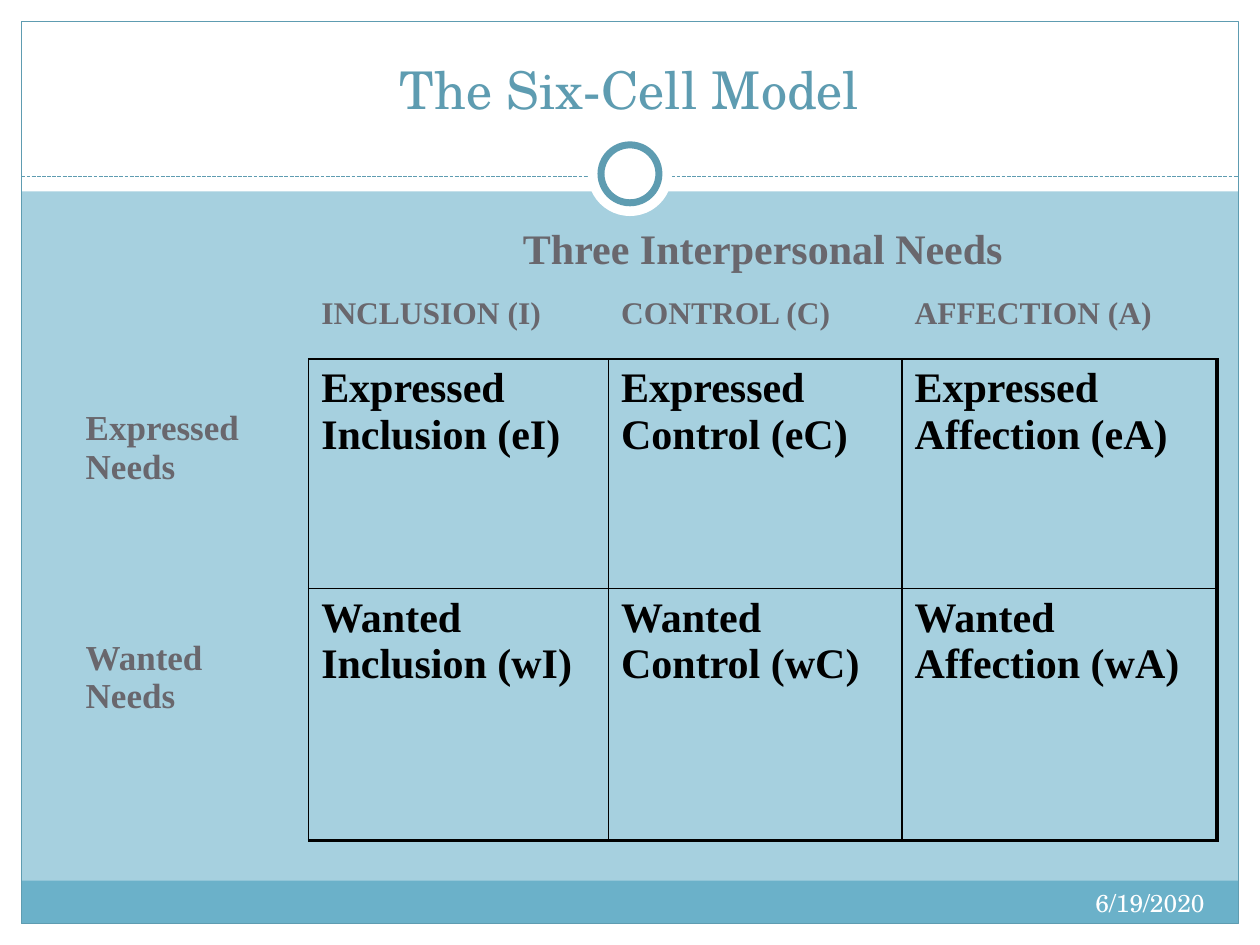
import pptx
import pptx.dml.color
import pptx.enum.dml
import pptx.enum.shapes
import pptx.enum.text
import pptx.util
from lxml import etree
from pptx.oxml.ns import qn
from pptx.util import Inches

SHAPE = pptx.enum.shapes.MSO_SHAPE
ALIGN = pptx.enum.text.PP_ALIGN
ANCHOR = pptx.enum.text.MSO_ANCHOR
SERIF, SCHOOL = "Times New Roman", "TeX Gyre Schola"
WHITE, BLACK, GREY = "FFFFFF", "000000", "69676D"
SKY, BAND, TEAL = "A6D0DF", "6BB1C9", "5E9CB1"
NO_STYLE_NO_GRID = "{2D5ABB26-0587-4C30-8999-92F81FD0307C}"


def rgb(value):
    return pptx.dml.color.RGBColor.from_string(value)


def add_panel(s, kind, box, fill=None, line=None, width=0.75):
    sp = s.shapes.add_shape(kind, *map(Inches, box))
    sp.shadow.inherit = False
    if fill:
        sp.fill.solid()
        sp.fill.fore_color.rgb = rgb(fill)
    else:
        sp.fill.background()
    if line:
        sp.line.color.rgb = rgb(line)
        sp.line.width = pptx.util.Pt(width)
    else:
        sp.line.fill.background()


def set_text(tf, text, size, font, color, bold=False, align=ALIGN.LEFT):
    tf.word_wrap = True
    tf.text = text
    p = tf.paragraphs[0]
    p.alignment = align
    p.font.size = pptx.util.Pt(size)
    p.font.name = font
    p.font.bold = bold
    p.font.color.rgb = rgb(color)


def set_border(cell, side, width):
    tc_pr = cell._tc.get_or_add_tcPr()
    ln = etree.SubElement(tc_pr, qn(f"a:ln{side}"), w=str(pptx.util.Pt(width)))
    fill = etree.SubElement(ln, qn("a:solidFill"))
    etree.SubElement(fill, qn("a:srgbClr"), val=BLACK)


def draw_frame(s, width, height):
    margin, header = 0.17, 1.52
    # White edges and header
    for box in [(0, height - margin, width, margin), (0, 0, width, header),
                (0, 0, margin, height), (width - margin, 0, margin, height)]:
        add_panel(s, SHAPE.RECTANGLE, box, WHITE)
    # Footer band and outline
    inner = width - 2 * margin
    add_panel(s, SHAPE.RECTANGLE, (margin, 6.99, inner, 0.34), BAND)
    add_panel(s, SHAPE.RECTANGLE, (margin, margin, inner, height - 2 * margin), line=TEAL)
    # Dashed rule
    rule = s.shapes.add_connector(
        pptx.enum.shapes.MSO_CONNECTOR.STRAIGHT,
        Inches(margin), Inches(1.4), Inches(width - margin), Inches(1.4))
    rule.line.color.rgb = rgb(TEAL)
    rule.line.width = pptx.util.Pt(0.75)
    rule.line.dash_style = pptx.enum.dml.MSO_LINE.SQUARE_DOT
    etree.SubElement(rule._element.spPr, qn("a:effectLst"))
    # Ring over the rule
    for size, line in [(0.67, None), (0.46, TEAL)]:
        box = (width / 2 - size / 2, 1.38 - size / 2, size, size)
        add_panel(s, SHAPE.OVAL, box, WHITE, line, 4)


def place_title(s, left, top, width, height):
    title = s.shapes.title
    title.left, title.top = Inches(left), Inches(top)
    title.width, title.height = Inches(width), Inches(height)
    tf = title.text_frame
    tf.auto_size = pptx.enum.text.MSO_AUTO_SIZE.NONE
    tf.vertical_anchor = ANCHOR.BOTTOM
    set_text(tf, "The Six-Cell Model", 29.7, SCHOOL, TEAL, align=ALIGN.CENTER)
    s.shapes._spTree.append(title._element)  # in front of the header


def draw_needs_table(s, left, top):
    cols, rows = [1.87, 2.38, 2.33, 2.5], [0.55, 0.55, 1.82, 2]
    needs = [("Inclusion", "I"), ("Control", "C"), ("Affection", "A")]
    frame = s.shapes.add_table(len(rows), len(cols), Inches(left), Inches(top),
                               Inches(sum(cols)), Inches(sum(rows)))
    table = frame.table
    table.first_row = table.horz_banding = False
    table._tbl.tblPr.find(qn("a:tableStyleId")).text = NO_STYLE_NO_GRID
    for column, width in zip(table.columns, cols):
        column.width = Inches(width)
    for row, height in zip(table.rows, rows):
        row.height = Inches(height)

    # Column headings
    table.cell(0, 1).merge(table.cell(0, 3))
    set_text(table.cell(0, 1).text_frame, "Three Interpersonal Needs",
             24, SERIF, GREY, True, ALIGN.CENTER)
    for c, (need, letter) in enumerate(needs, 1):
        set_text(table.cell(1, c).text_frame, f"{need.upper()} ({letter})",
                 18, SERIF, GREY, True)
        set_border(table.cell(1, c), "B", 1)

    # Row labels and the six cells
    for r, kind in enumerate(["Expressed", "Wanted"], 2):
        label = table.cell(r, 0)
        label.margin_top = Inches(0.4)
        set_text(label.text_frame, f"{kind} Needs", 20, SERIF, GREY, True)
        set_border(label, "R", 1)
        for c, (need, letter) in enumerate(needs, 1):
            cell = table.cell(r, c)
            set_text(cell.text_frame, f"{kind} {need} ({kind[0].lower()}{letter})",
                     24, SERIF, BLACK, True)
            set_border(cell, "L", 1)
            set_border(cell, "R", 2.25 if c == 3 else 1)
            set_border(cell, "T", 1)
            set_border(cell, "B", 2.25 if r == 3 else 1)

    for cell in table.iter_cells():
        cell.fill.background()


def place_date(s, left, top, width, height):
    box = s.shapes.add_textbox(*map(Inches, (left, top, width, height)))
    set_text(box.text_frame, "6/19/2020", 14, SCHOOL, WHITE, align=ALIGN.RIGHT)


def main():
    prs = pptx.Presentation()
    prs.slide_width, prs.slide_height = Inches(10), Inches(7.5)
    s = prs.slides.add_slide(prs.slide_layouts[5])
    s.background.fill.solid()
    s.background.fill.fore_color.rgb = rgb(SKY)
    draw_frame(s, 10, 7.5)
    place_title(s, 0.75, 0.67, 8.5, 0.33)
    draw_needs_table(s, 0.58, 1.75)
    place_date(s, 6.33, 7, 3.33, 0.4)
    prs.save("out.pptx")


if __name__ == "__main__":
    main()
